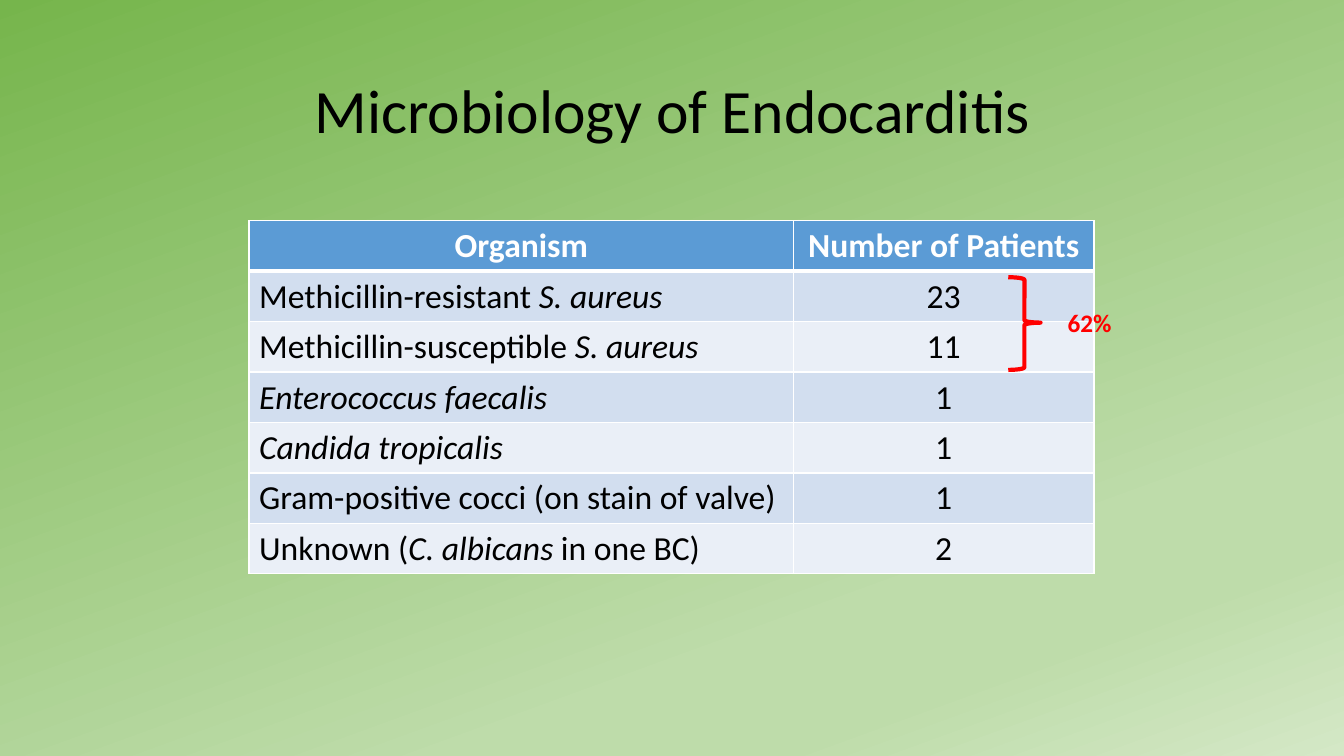
from lxml import etree
from pptx import Presentation
from pptx.dml.color import RGBColor
from pptx.enum.shapes import MSO_SHAPE
from pptx.enum.text import MSO_ANCHOR, MSO_AUTO_SIZE, PP_ALIGN
from pptx.oxml.ns import qn
from pptx.util import Inches, Pt

LEFT, CENTER = PP_ALIGN.LEFT, PP_ALIGN.CENTER
MIDDLE, TOP = MSO_ANCHOR.MIDDLE, MSO_ANCHOR.TOP
RIGHT_BRACE = MSO_SHAPE.RIGHT_BRACE
GROW = MSO_AUTO_SIZE.SHAPE_TO_FIT_TEXT

FONT = "Calibri"
COLORS = {
    "text": "000000",
    "header_text": "FFFFFF",
    "header": "5B9BD5",
    "odd_row": "D2DEEF",
    "even_row": "EAEFF7",
    "border": "FFFFFF",
    "accent": "FF0000",
}
BACKGROUND_STOPS = [(0, "76B54C"), (74, "BEDCAA"), (83, "BEDCAA"), (100, "D4E8C6")]
BACKGROUND_ANGLE = 70

TABLE_LEFT, TABLE_TOP = 2.47, 2.19
COLUMN_WIDTHS = [5.4, 2.98]
ROW_HEIGHT = 0.5

HEADER = ["Organism", "Number of Patients"]
# Each organism is a list of (text, italic) runs.
ORGANISMS = [
    ([("Methicillin-resistant ", False), ("S. aureus", True)], 23),
    ([("Methicillin-susceptible ", False), ("S. aureus", True)], 11),
    ([("Enterococcus faecalis", True)], 1),
    ([("Candida tropicalis", True)], 1),
    ([("Gram-positive cocci (on stain of valve)", False)], 1),
    ([("Unknown (", False), ("C. albicans ", True), ("in one BC)", False)], 2),
]


def color(name):
    return RGBColor.from_string(COLORS[name])


def paint_background(slide):
    fill = slide.background.fill
    fill.gradient()
    fill.gradient_angle = 360 - BACKGROUND_ANGLE
    stop_list = slide.element.find(".//" + qn("a:gsLst"))
    for stop in list(stop_list):
        stop_list.remove(stop)
    for percent, value in BACKGROUND_STOPS:
        stop = etree.SubElement(stop_list, qn("a:gs"), pos=str(percent * 1000))
        etree.SubElement(stop, qn("a:srgbClr"), val=value)


def write_runs(paragraph, runs, color_name, alignment=LEFT, **font_format):
    """Fill a paragraph with (text, italic) runs that share one format."""
    paragraph.alignment = alignment
    for text, italic in runs:
        run = paragraph.add_run()
        run.text = text
        run.font.color.rgb = color(color_name)
        for name, value in {"name": FONT, "italic": italic, **font_format}.items():
            setattr(run.font, name, value)


def add_label(slide, box, text, color_name, alignment=LEFT, frame_format=None, **font_format):
    text_box = slide.shapes.add_textbox(*map(Inches, box))
    frame = text_box.text_frame
    for name, value in (frame_format or {}).items():
        setattr(frame, name, value)
    paragraph = frame.paragraphs[0]
    write_runs(paragraph, [(text, False)], color_name, alignment, **font_format)
    return paragraph


def set_borders(cell, widths):
    """Draw cell borders from a dict of side letter to points."""
    properties = cell._tc.get_or_add_tcPr()
    for index, side in enumerate("LRTB"):
        line = etree.Element(qn("a:ln" + side), w=str(Pt(widths[side])))
        fill = etree.SubElement(line, qn("a:solidFill"))
        etree.SubElement(fill, qn("a:srgbClr"), val=COLORS["border"])
        properties.insert(index, line)


def fill_cell(cell, runs, row, alignment):
    is_header = row == 0
    fill_name = "header" if is_header else "odd_row" if row % 2 else "even_row"
    cell.fill.solid()
    cell.fill.fore_color.rgb = color(fill_name)
    set_borders(cell, {"L": 1, "R": 1, "T": 3 if row == 1 else 1, "B": 3 if is_header else 1})
    text_color = "header_text" if is_header else "text"
    write_runs(cell.text_frame.paragraphs[0], runs, text_color, alignment,
               size=Pt(24), bold=is_header)


def add_organism_table(slide):
    rows = [[[(title, False)] for title in HEADER]]
    rows += [[runs, [(str(count), False)]] for runs, count in ORGANISMS]
    box = (TABLE_LEFT, TABLE_TOP, sum(COLUMN_WIDTHS), ROW_HEIGHT * len(rows))
    table = slide.shapes.add_table(len(rows), len(HEADER), *map(Inches, box)).table
    for column, width in zip(table.columns, COLUMN_WIDTHS):
        column.width = Inches(width)
    for row, contents in enumerate(rows):
        for column, runs in enumerate(contents):
            alignment = LEFT if row and column == 0 else CENTER
            fill_cell(table.cell(row, column), runs, row, alignment)


def add_brace(slide, box):
    brace = slide.shapes.add_shape(RIGHT_BRACE, *map(Inches, box))
    brace.shadow.inherit = False
    brace.fill.background()
    brace.line.color.rgb = color("accent")
    brace.line.width = Pt(3)
    brace.adjustments[0] = 0.08
    brace.adjustments[1] = 0.49


def main():
    presentation = Presentation()
    presentation.slide_width = Inches(13.33)
    presentation.slide_height = Inches(7.5)
    slide = presentation.slides.add_slide(presentation.slide_layouts[6])

    paint_background(slide)
    title = add_label(slide, (0.92, 0.4, 11.5, 1.45), "Microbiology of Endocarditis",
                      "text", CENTER, {"word_wrap": True, "vertical_anchor": MIDDLE},
                      size=Pt(44))
    title.line_spacing = 0.9
    add_organism_table(slide)
    add_brace(slide, (10, 2.75, 0.32, 0.92))
    add_label(slide, (10.49, 3, 0.64, 0.4), "62%", "accent", LEFT,
              {"word_wrap": False, "auto_size": GROW, "vertical_anchor": TOP},
              size=Pt(18), bold=True)

    presentation.save("out.pptx")


if __name__ == "__main__":
    main()
